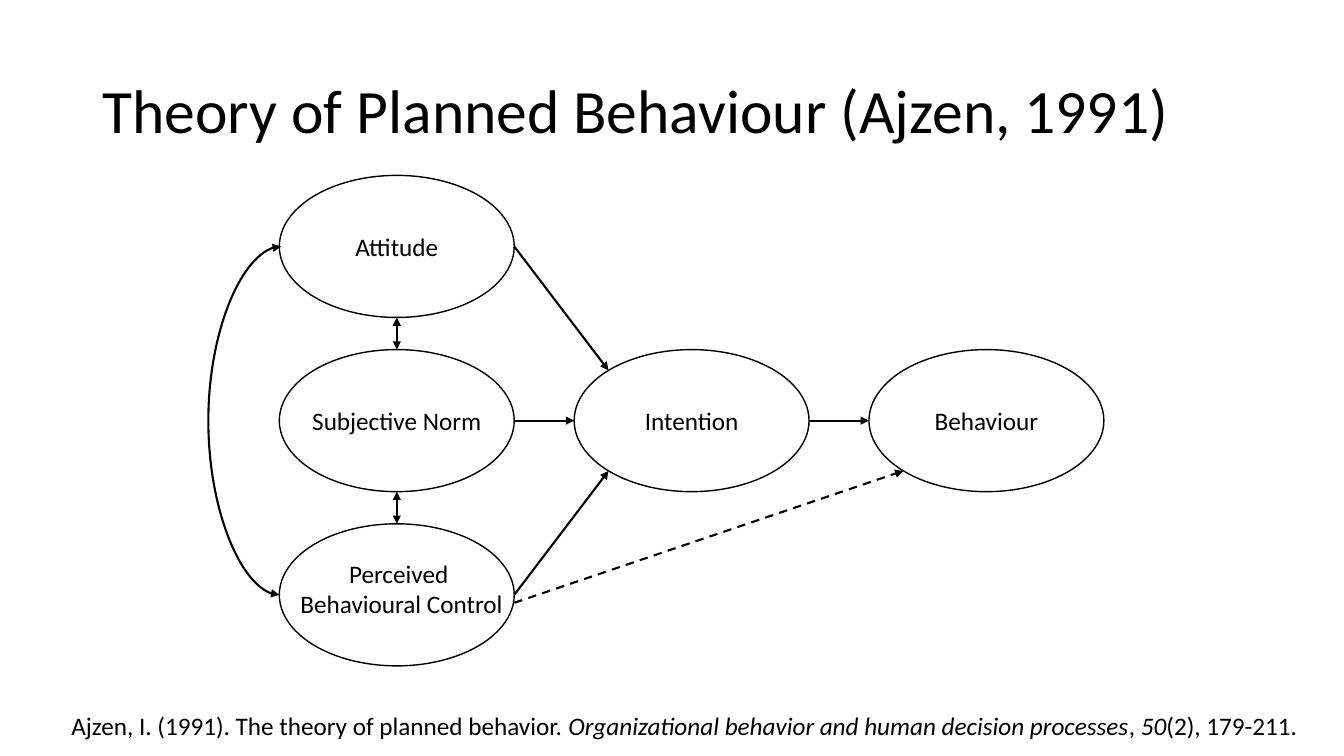
from dataclasses import dataclass
from math import cos, radians, sin

from lxml import etree
from pptx import Presentation
from pptx.dml.color import RGBColor
from pptx.enum.dml import MSO_LINE
from pptx.enum.shapes import MSO_CONNECTOR, MSO_SHAPE
from pptx.enum.text import MSO_ANCHOR, MSO_AUTO_SIZE, PP_ALIGN
from pptx.oxml.ns import qn
from pptx.util import Cm, Pt

OVAL = MSO_SHAPE.OVAL
STRAIGHT = MSO_CONNECTOR.STRAIGHT
CURVE = MSO_CONNECTOR.CURVE
DASH = MSO_LINE.DASH
MIDDLE = MSO_ANCHOR.MIDDLE
LEFT = PP_ALIGN.LEFT
CENTER = PP_ALIGN.CENTER
NO_AUTOFIT = MSO_AUTO_SIZE.NONE
GROW = MSO_AUTO_SIZE.SHAPE_TO_FIT_TEXT

TOP_SITE, TOP_LEFT_SITE, LEFT_SITE, BOTTOM_LEFT_SITE, BOTTOM_SITE = range(5)
RIGHT_SITE = 6


@dataclass(frozen=True)
class Theme:
    font: str = "Calibri"
    ink: RGBColor = RGBColor(0, 0, 0)
    title_size: float = 44
    text_size: float = 18
    outline: float = 1
    arrow: float = 1.5


@dataclass
class Oval:
    shape: object
    left: float
    top: float
    width: float
    height: float

    @property
    def center(self):
        return self.left + self.width / 2, self.top + self.height / 2

    def site(self, index):
        angle = radians(90 + 45 * index)
        x, y = self.center
        return x + self.width / 2 * cos(angle), y - self.height / 2 * sin(angle)


class DiagramSlide:
    def __init__(self, slide, theme):
        self.slide = slide
        self.theme = theme

    def add_runs(self, paragraph, runs, size, alignment=LEFT):
        paragraph.alignment = alignment
        for text, italic in runs:
            run = paragraph.add_run()
            run.text = text
            run.font.name = self.theme.font
            run.font.size = Pt(size)
            run.font.italic = italic
            run.font.color.rgb = self.theme.ink

    def title(self, text, left, top, width, height):
        shape = self.slide.shapes.title
        shape.left, shape.top = Cm(left), Cm(top)
        shape.width, shape.height = Cm(width), Cm(height)
        frame = shape.text_frame
        frame.auto_size = NO_AUTOFIT
        frame.word_wrap = True
        frame.vertical_anchor = MIDDLE
        paragraph = frame.paragraphs[0]
        paragraph.line_spacing = 0.9
        self.add_runs(paragraph, [(text, False)], self.theme.title_size)

    def text(self, lines, left, top, width, height, alignment=LEFT):
        box = self.slide.shapes.add_textbox(Cm(left), Cm(top), Cm(width), Cm(height))
        frame = box.text_frame
        frame.word_wrap = False
        frame.auto_size = GROW
        for index, runs in enumerate(lines):
            paragraph = frame.add_paragraph() if index else frame.paragraphs[0]
            self.add_runs(paragraph, runs, self.theme.text_size, alignment)

    def oval(self, left, top, width, height):
        shape = self.slide.shapes.add_shape(OVAL, Cm(left), Cm(top), Cm(width), Cm(height))
        shape.shadow.inherit = False
        shape.fill.background()
        shape.line.color.rgb = self.theme.ink
        shape.line.width = Pt(self.theme.outline)
        return Oval(shape, left, top, width, height)

    def label(self, oval, lines, width, height, shift=(0, 0)):
        x, y = oval.center
        self.text([[(line, False)] for line in lines], x - width / 2 + shift[0],
                  y - height / 2 + shift[1], width, height, CENTER)

    def connector(self, kind, start, end, both_ends=False, dashed=False):
        connector = self.slide.shapes.add_connector(kind, *(Cm(value) for value in (*start, *end)))
        line = connector.line
        line.color.rgb = self.theme.ink
        line.width = Pt(self.theme.arrow)
        if dashed:
            line.dash_style = DASH
        properties = connector.element.find(qn("p:spPr"))
        outline = properties.find(qn("a:ln"))
        for tag in ("a:headEnd", "a:tailEnd") if both_ends else ("a:tailEnd",):
            etree.SubElement(outline, qn(tag), type="triangle")
        etree.SubElement(properties, qn("a:effectLst"))
        return connector

    def arrow(self, source, source_site, target, target_site, drop=0, **style):
        x, y = source.site(source_site)
        connector = self.connector(STRAIGHT, (x, y + drop), target.site(target_site), **style)
        links = next(connector.element.iter(qn("p:cNvCxnSpPr")))
        ends = [("a:endCxn", target, target_site)]
        if not drop:
            ends.insert(0, ("a:stCxn", source, source_site))
        for tag, oval, site in ends:
            etree.SubElement(links, qn(tag), id=str(oval.shape.shape_id), idx=str(site))

    def side_curve(self, source, target, bulge, offset):
        x, y = source.site(LEFT_SITE)
        connector = self.connector(CURVE, (x + offset, y), target.site(LEFT_SITE), both_ends=True)
        properties = connector.element.find(qn("p:spPr"))
        transform = properties.find(qn("a:xfrm"))
        transform.attrib.pop("flipH", None)
        transform.set("rot", "10800000")
        transform.set("flipV", "1")
        guides = properties.find(qn("a:prstGeom")).find(qn("a:avLst"))
        bend = round(bulge / offset * 100000)
        etree.SubElement(guides, qn("a:gd"), name="adj1", fmla=f"val {bend}")


def main():
    presentation = Presentation()
    presentation.slide_width, presentation.slide_height = Cm(33.87), Cm(19.05)
    slide = presentation.slides.add_slide(presentation.slide_layouts[5])
    diagram = DiagramSlide(slide, Theme())
    diagram.title("Theory of Planned Behaviour (Ajzen, 1991)", 2.33, 1.01, 29.21, 3.68)

    line_height, two_lines = 1.03, 1.8
    concepts = {
        "intention": (1, 1, ["Intention"], 2.9, line_height, (0, 0)),
        "behaviour": (2, 1, ["Behaviour"], 3.15, line_height, (0, 0)),
        "norm": (0, 1, ["Subjective Norm"], 4.83, line_height, (0, 0)),
        "attitude": (0, 0, ["Attitude"], 2.64, line_height, (0, 0)),
        "control": (0, 2, ["Perceived ", "Behavioural Control"], 5.66, two_lines, (0.12, -0.14)),
    }
    ovals = {}
    for name, (column, row, lines, width, height, shift) in concepts.items():
        oval = diagram.oval(7.04 + 7.43 * column, 4.42 + 4.39 * row, 5.92, 3.58)
        diagram.label(oval, lines, width, height, shift)
        ovals[name] = oval

    for source, target, site in (
        ("attitude", "intention", TOP_LEFT_SITE),
        ("intention", "behaviour", LEFT_SITE),
        ("norm", "intention", LEFT_SITE),
        ("control", "intention", BOTTOM_LEFT_SITE),
    ):
        diagram.arrow(ovals[source], RIGHT_SITE, ovals[target], site)
    diagram.arrow(ovals["control"], RIGHT_SITE, ovals["behaviour"], BOTTOM_LEFT_SITE,
                  drop=0.2, dashed=True)
    for upper, lower in (("attitude", "norm"), ("norm", "control")):
        diagram.arrow(ovals[upper], BOTTOM_SITE, ovals[lower], TOP_SITE, both_ends=True)
    diagram.side_curve(ovals["attitude"], ovals["control"], bulge=1.83, offset=0.04)

    reference = [
        ("Ajzen, I. (1991). The theory of planned behavior. ", False),
        ("Organizational behavior and human decision processes", True),
        (", ", False),
        ("50", True),
        ("(2), 179-211.", False),
    ]
    diagram.text([reference], 1.55, 17.78, 31.75, line_height)
    presentation.save("out.pptx")


if __name__ == "__main__":
    main()
